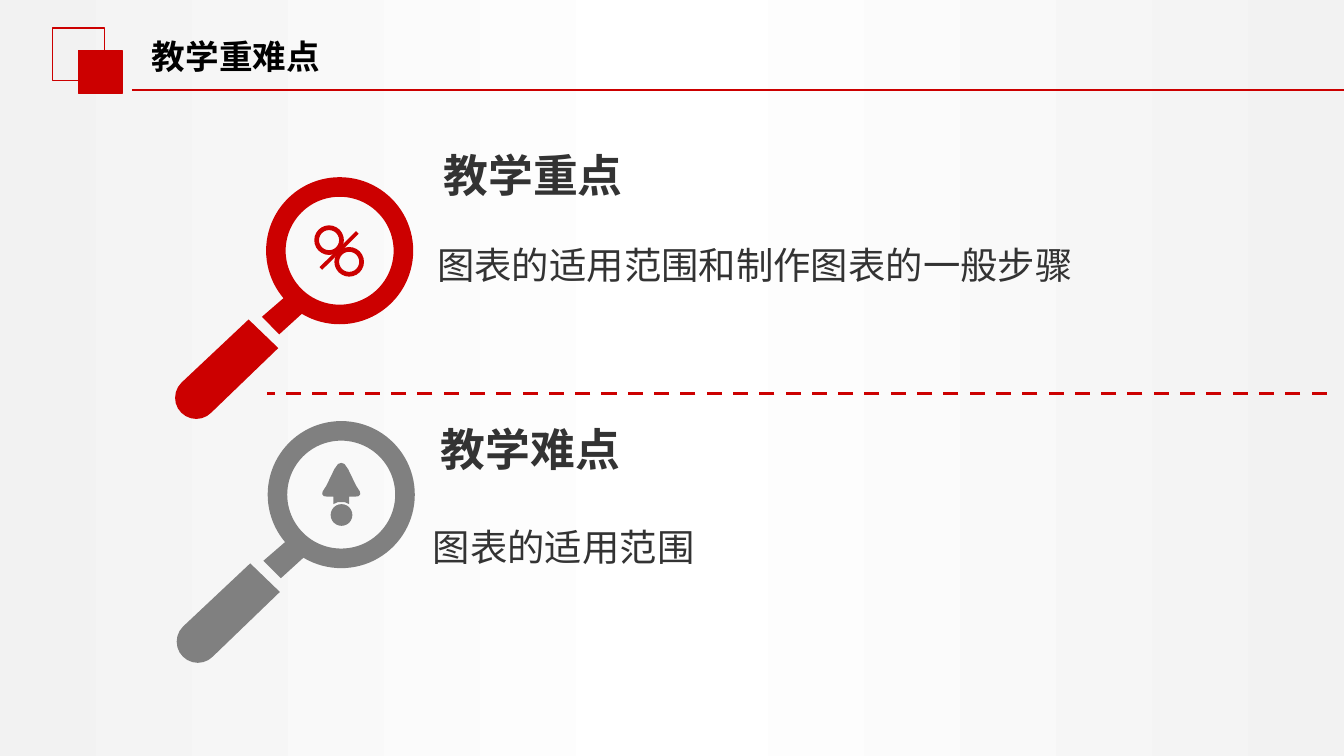
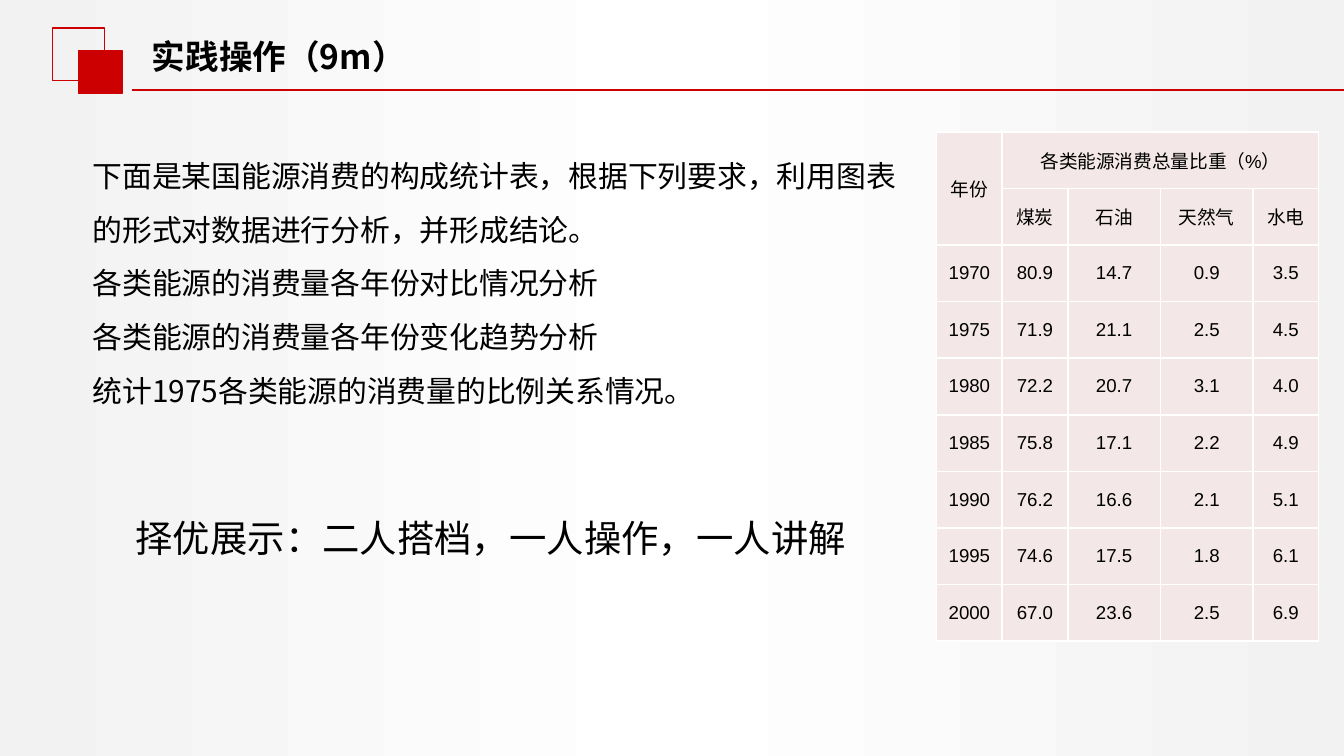
from math import cos, radians, sin

from lxml import etree
from pptx import Presentation
from pptx.dml.color import RGBColor
from pptx.enum.dml import MSO_LINE
from pptx.enum.shapes import MSO_CONNECTOR, MSO_SHAPE
from pptx.enum.text import MSO_ANCHOR, MSO_AUTO_SIZE, PP_ALIGN
from pptx.oxml.ns import qn
from pptx.util import Cm, Pt

RECTANGLE, OVAL, DONUT = MSO_SHAPE.RECTANGLE, MSO_SHAPE.OVAL, MSO_SHAPE.DONUT
STRAIGHT, DASH = MSO_CONNECTOR.STRAIGHT, MSO_LINE.DASH
LEFT, CENTER = PP_ALIGN.LEFT, PP_ALIGN.CENTER
TOP, MIDDLE = MSO_ANCHOR.TOP, MSO_ANCHOR.MIDDLE

PAGE_WIDTH, PAGE_HEIGHT = 25.4, 14.29
CJK_FONT, TABLE_FONT = "Noto Sans CJK SC", "Arial"
COLORS = {
    "red": "CC0000",
    "gray": "808080",
    "heading": "333333",
    "black": "000000",
    "cell": "F4E7E7",
    "white": "FFFFFF",
    "edge": "F2F2F2",
}
BACKGROUND_STOPS = [(0, "edge"), (50, "white"), (100, "edge")]
TITLE_AREA = (2.69, 0.58, 9.75, 0.97)
NARROW, WIDE = (0.18, 0.1), (0.25, 0.13)

FOCUS_TITLE = "教学重难点"
FOCUS_POINTS = [
    {
        "heading": ("教学重点", (8.2, 2.69, 4, 1.22)),
        "body": ("图表的适用范围和制作图表的一般步骤", (8.08, 4.47, 13.61, 1.04)),
    },
    {
        "heading": ("教学难点", (8.15, 7.87, 4, 1.22)),
        "body": ("图表的适用范围", (8, 9.8, 6.68, 1.04)),
    },
]

PRACTICE_TITLE = "实践操作（9m）"
TASKS = [
    "下面是某国能源消费的构成统计表，根据下列要求，利用图表的形式对数据进行分析，并形成结论。",
    "各类能源的消费量各年份对比情况分析",
    "各类能源的消费量各年份变化趋势分析",
    "统计1975各类能源的消费量的比例关系情况。",
]
CLOSING = "择优展示：二人搭档，一人操作，一人讲解"
ENERGY_ROWS = [
    ("年份", "各类能源消费总量比重（%）", "", "", ""),
    ("", "煤炭", "石油", "天然气", "水电"),
    ("1970", "80.9", "14.7", "0.9", "3.5"),
    ("1975", "71.9", "21.1", "2.5", "4.5"),
    ("1980", "72.2", "20.7", "3.1", "4.0"),
    ("1985", "75.8", "17.1", "2.2", "4.9"),
    ("1990", "76.2", "16.6", "2.1", "5.1"),
    ("1995", "74.6", "17.5", "1.8", "6.1"),
    ("2000", "67.0", "23.6", "2.5", "6.9"),
]
COLUMN_WIDTHS = [1.24, 1.24, 1.75, 1.75, 1.24]
ROW_HEIGHT = 1.07

COLLAR = [(2.54, 2.46), (1.98, 2.97), (1.65, 2.64), (2.24, 2.13)]
HANDLE_END, HANDLE_RADIUS = (0.41, 4.17), 0.4
HANDLE_CAP = [
    (HANDLE_END[0] + HANDLE_RADIUS * cos(radians(angle)),
     HANDLE_END[1] + HANDLE_RADIUS * sin(radians(angle)))
    for angle in range(225, 44, -15)
]
HANDLE = [(1.4, 2.69), *HANDLE_CAP, (1.96, 3.23)]
PERCENT_RINGS = [(2.64, 0.91), (3.02, 1.32)]
SLASH = [(3.48, 1.07), (2.79, 1.75), (2.74, 1.7), (3.43, 1.02)]
ARROW_AXIS = 3.12
ARROW_HALF = [
    (0, 0.79), (0.06, 0.81), (0.13, 0.91), (0.28, 1.22), (0.35, 1.33), (0.36, 1.38),
    (0.33, 1.42), (0.25, 1.43), (0.15, 1.43), (0.15, 1.57), (0.06, 1.53),
]
ARROW = [(ARROW_AXIS + x, y) for x, y in ARROW_HALF]
ARROW += [(ARROW_AXIS - x, y) for x, y in reversed(ARROW_HALF)]


def color(name):
    return RGBColor.from_string(COLORS[name])


def lengths(values):
    return [Cm(value) for value in values]


def format_paragraph(para, size, tint, bold=False, font=CJK_FONT, align=LEFT,
                     before=0, spacing=1.0):
    para.alignment = align
    para.space_before = Pt(before)
    para.line_spacing = spacing
    para.font.size = Pt(size)
    para.font.bold = bold
    para.font.name = font
    para.font.color.rgb = color(tint)
    properties = para._p.get_or_add_pPr()
    properties.set("marL", "0")
    properties.set("indent", "0")
    defaults = properties.find(qn("a:defRPr"))
    etree.SubElement(defaults, qn("a:ea"), typeface=CJK_FONT)
    defaults.addprevious(etree.Element(qn("a:buNone")))


def fill_text(box, lines, area, size, tint, margins=NARROW, anchor=TOP, **style):
    box.left, box.top, box.width, box.height = lengths(area)
    frame = box.text_frame
    frame.text = "\n".join(lines)
    frame.word_wrap = True
    frame.auto_size = MSO_AUTO_SIZE.NONE
    frame.vertical_anchor = anchor
    frame.margin_left = frame.margin_right = Cm(margins[0])
    frame.margin_top = frame.margin_bottom = Cm(margins[1])
    for para in frame.paragraphs:
        format_paragraph(para, size, tint, **style)


def paint(shape, fill=None, line=None):
    shape.shadow.inherit = False
    if fill:
        shape.fill.solid()
        shape.fill.fore_color.rgb = color(fill)
    else:
        shape.fill.background()
    if line:
        shape.line.color.rgb = color(line)
        shape.line.width = Pt(0.75)
    else:
        shape.line.fill.background()
    return shape


def add_rule(page, start, end, width, dash=None):
    rule = page.shapes.add_connector(STRAIGHT, *lengths(start + end))
    rule.line.color.rgb = color("red")
    rule.line.width = Pt(width)
    if dash:
        rule.line.dash_style = dash
    etree.SubElement(rule.element.spPr, qn("a:effectLst"))
    return rule


def add_page(deck, layout, title):
    page = deck.slides.add_slide(deck.slide_layouts.get_by_name(layout))
    fill_text(page.shapes.title, [title], TITLE_AREA, 18, "black", bold=True)
    return page


def decorate_master(deck, page):
    master = deck.slide_master
    fill = master.background.fill
    fill.gradient()
    fill.gradient_angle = 0
    stops = master.element.find(".//" + qn("a:gsLst"))
    for stop in list(stops):
        stops.remove(stop)
    for percent, name in BACKGROUND_STOPS:
        stop = etree.SubElement(stops, qn("a:gs"), pos=str(percent * 1000))
        etree.SubElement(stop, qn("a:srgbClr"), val=COLORS[name])
    outline = page.shapes.add_shape(RECTANGLE, *lengths((0.99, 0.53, 0.99, 0.99)))
    block = page.shapes.add_shape(RECTANGLE, *lengths((1.49, 0.95, 0.82, 0.82)))
    parts = [
        paint(outline, line="red"),
        paint(block, "red", "red"),
        add_rule(page, (2.49, 1.7), (PAGE_WIDTH, 1.7), 1.25),
    ]
    for part in parts:
        master.shapes.element.append(part.element)


class Magnifier:
    def __init__(self, page, origin, tint):
        self.shapes = page.shapes.add_group_shape().shapes
        self.origin = origin
        self.tint = tint
        self.add_round(DONUT, (1.73, 0), 2.78, 0.133)
        self.add_outline(COLLAR)
        self.add_outline(HANDLE)

    def place(self, point):
        return lengths((self.origin[0] + point[0], self.origin[1] + point[1]))

    def add_round(self, kind, point, size, thickness=None):
        shape = self.shapes.add_shape(kind, *self.place(point), Cm(size), Cm(size))
        if thickness:
            shape.adjustments[0] = thickness
        paint(shape, self.tint)

    def add_outline(self, points):
        first, *rest = [self.place(point) for point in points]
        builder = self.shapes.build_freeform(*first)
        builder.add_line_segments(rest, close=True)
        paint(builder.convert_to_shape(), self.tint)


def build_focus_page(deck):
    page = add_page(deck, "Comparison", FOCUS_TITLE)
    decorate_master(deck, page)
    boxes = list(page.placeholders)[1:]
    for point, heading, body in zip(FOCUS_POINTS, boxes[::2], boxes[1::2]):
        text, area = point["heading"]
        fill_text(heading, [text], area, 24, "heading", bold=True)
        text, area = point["body"]
        fill_text(body, [text], area, 20, "heading", before=4)
    add_rule(page, (25.07, 7.44), (5.05, 7.44), 2, DASH)

    percent = Magnifier(page, (3.3, 3.35), "red")
    for point in PERCENT_RINGS:
        percent.add_round(DONUT, point, 0.56, 0.16)
    percent.add_outline(SLASH)

    alert = Magnifier(page, (3.33, 7.96), "gray")
    alert.add_outline(ARROW)
    alert.add_round(OVAL, (2.92, 1.57), 0.41)


def format_cell(cell, text):
    cell.text = text
    cell.vertical_anchor = MIDDLE
    cell.margin_left = cell.margin_right = Cm(0.15)
    cell.margin_top = cell.margin_bottom = Cm(0.1)
    format_paragraph(cell.text_frame.paragraphs[0], 10, "black",
                     font=TABLE_FONT, align=CENTER)
    cell.fill.solid()
    cell.fill.fore_color.rgb = color("cell")
    properties = cell._tc.get_or_add_tcPr()
    for index, side in enumerate(("lnL", "lnR", "lnT", "lnB")):
        border = etree.Element(qn("a:" + side), w=str(Pt(1)))
        fill = etree.SubElement(border, qn("a:solidFill"))
        etree.SubElement(fill, qn("a:srgbClr"), val=COLORS["white"])
        properties.insert(index, border)


def add_energy_table(page):
    area = (17.7, 2.49, sum(COLUMN_WIDTHS), ROW_HEIGHT * len(ENERGY_ROWS))
    frame = page.shapes.add_table(len(ENERGY_ROWS), len(COLUMN_WIDTHS), *lengths(area))
    table = frame.table
    table.first_row = table.horz_banding = False
    for column, width in zip(table.columns, COLUMN_WIDTHS):
        column.width = Cm(width)
    for row, texts in zip(table.rows, ENERGY_ROWS):
        row.height = Cm(ROW_HEIGHT)
        for cell, text in zip(row.cells, texts):
            format_cell(cell, text)
    table.cell(0, 0).merge(table.cell(1, 0))
    table.cell(0, 1).merge(table.cell(0, 4))


def build_practice_page(deck):
    page = add_page(deck, "Two Content", PRACTICE_TITLE)
    add_energy_table(page)
    tasks, closing = list(page.placeholders)[1:]
    style = {"margins": WIDE, "anchor": MIDDLE, "spacing": 1.5}
    fill_text(tasks, TASKS, (1.5, 2.49, 16.2, 5.38), 16, "black", **style)
    fill_text(closing, [CLOSING], (2.31, 9.17, 14.4, 1.55), 20, "black", **style)


def main():
    deck = Presentation()
    deck.slide_width, deck.slide_height = lengths((PAGE_WIDTH, PAGE_HEIGHT))
    build_focus_page(deck)
    build_practice_page(deck)
    deck.save("out.pptx")


if __name__ == "__main__":
    main()
